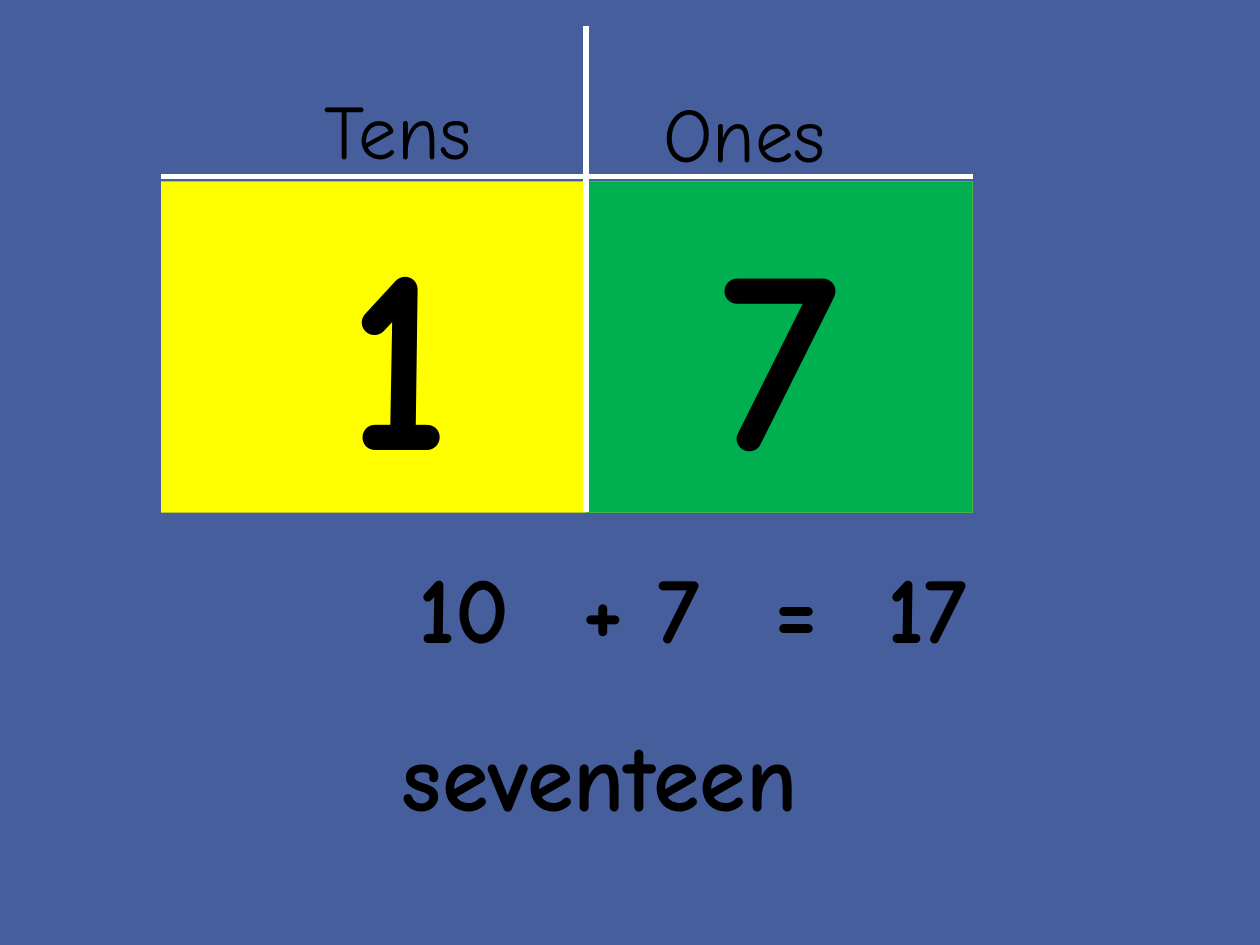
from dataclasses import dataclass

from lxml.etree import SubElement
from pptx import Presentation
from pptx.dml.color import RGBColor
from pptx.enum.shapes import MSO_CONNECTOR, MSO_SHAPE
from pptx.enum.text import MSO_ANCHOR, PP_ALIGN
from pptx.oxml import parse_xml
from pptx.oxml.ns import nsdecls, qn
from pptx.util import Inches, Pt


@dataclass(frozen=True)
class Theme:
    font: str = "Comic Neue"
    background: str = "465E9C"
    ink: str = "000000"
    rule: str = "FFFFFF"
    tens: str = "FFFF00"
    ones: str = "00B050"
    heading_size: int = 44
    word_size: int = 54
    digit_size: int = 150
    rule_width: int = 3
    outline_width: float = 1.4


THEME = Theme()


def set_format(target, values):
    for name, value in values.items():
        setattr(target, name, value)


def outline_text(run):
    width = Pt(THEME.outline_width)
    run.font._element.insert(0, parse_xml(
        f'<a:ln {nsdecls("a")} w="{width}"><a:solidFill>'
        f'<a:srgbClr val="{THEME.rule}"/></a:solidFill></a:ln>'))


def write(shape, text, size, bold=True, anchor=MSO_ANCHOR.TOP):
    frame = shape.text_frame
    set_format(frame, {"word_wrap": True, "vertical_anchor": anchor})
    paragraph = frame.paragraphs[0]
    paragraph.alignment = PP_ALIGN.CENTER
    run = paragraph.add_run()
    run.text = text
    set_format(run.font, {"name": THEME.font, "size": Pt(size), "bold": bold})
    run.font.color.rgb = RGBColor.from_string(THEME.ink)
    if bold:
        outline_text(run)


def add_label(slide, box, text, size, **style):
    label = slide.shapes.add_textbox(*map(Inches, box))
    write(label, text, size, **style)


def add_digit_card(slide, box, digit, color, right_inset=0.1):
    card = slide.shapes.add_shape(MSO_SHAPE.RECTANGLE, *map(Inches, box))
    card.shadow.inherit = False
    card.fill.solid()
    card.fill.fore_color.rgb = RGBColor.from_string(color)
    card.line.fill.background()
    write(card, digit, THEME.digit_size)
    card.text_frame.margin_right = Inches(right_inset)


def add_rule(slide, *ends):
    rule = slide.shapes.add_connector(MSO_CONNECTOR.STRAIGHT, *map(Inches, ends))
    rule.line.color.rgb = RGBColor.from_string(THEME.rule)
    rule.line.width = Pt(THEME.rule_width)
    SubElement(rule._element.spPr, qn("a:effectLst"))


def main():
    deck = Presentation()
    set_format(deck, {"slide_width": Inches(10), "slide_height": Inches(7.5)})
    slide = deck.slides.add_slide(deck.slide_layouts[6])
    slide.background.fill.solid()
    slide.background.fill.fore_color.rgb = RGBColor.from_string(THEME.background)

    # Place value chart: the ones card lies over the end of the tens card
    left, divider, right = 1.28, 4.65, 7.72
    top, height = 1.44, 2.63
    add_rule(slide, right, 1.4, left, 1.4)
    add_digit_card(slide, (left, top, right - left, height), "1", THEME.tens,
                   right_inset=2.76)
    add_digit_card(slide, (divider, top, right - divider, height), "7", THEME.ones)
    add_rule(slide, divider, 0.21, divider, 4.06)

    # Column headings
    for heading, x, y in (("Tens", 2.17, 0.4), ("Ones", 4.92, 0.42)):
        add_label(slide, (x, y, 1.98, 1.25), heading, THEME.heading_size,
                  bold=False, anchor=MSO_ANCHOR.MIDDLE)

    # Equation, each term centred on its own position
    term_width = 1.65
    for term, center in (("10", 3.68), ("+ 7", 5.09), ("=", 6.32), ("17", 7.36)):
        add_label(slide, (center - term_width / 2, 4.31, term_width, 1.01),
                  term, THEME.word_size)

    # Number word
    add_label(slide, (2.4, 5.64, 4.72, 1.01), "seventeen", THEME.word_size)

    deck.save("out.pptx")


if __name__ == "__main__":
    main()
